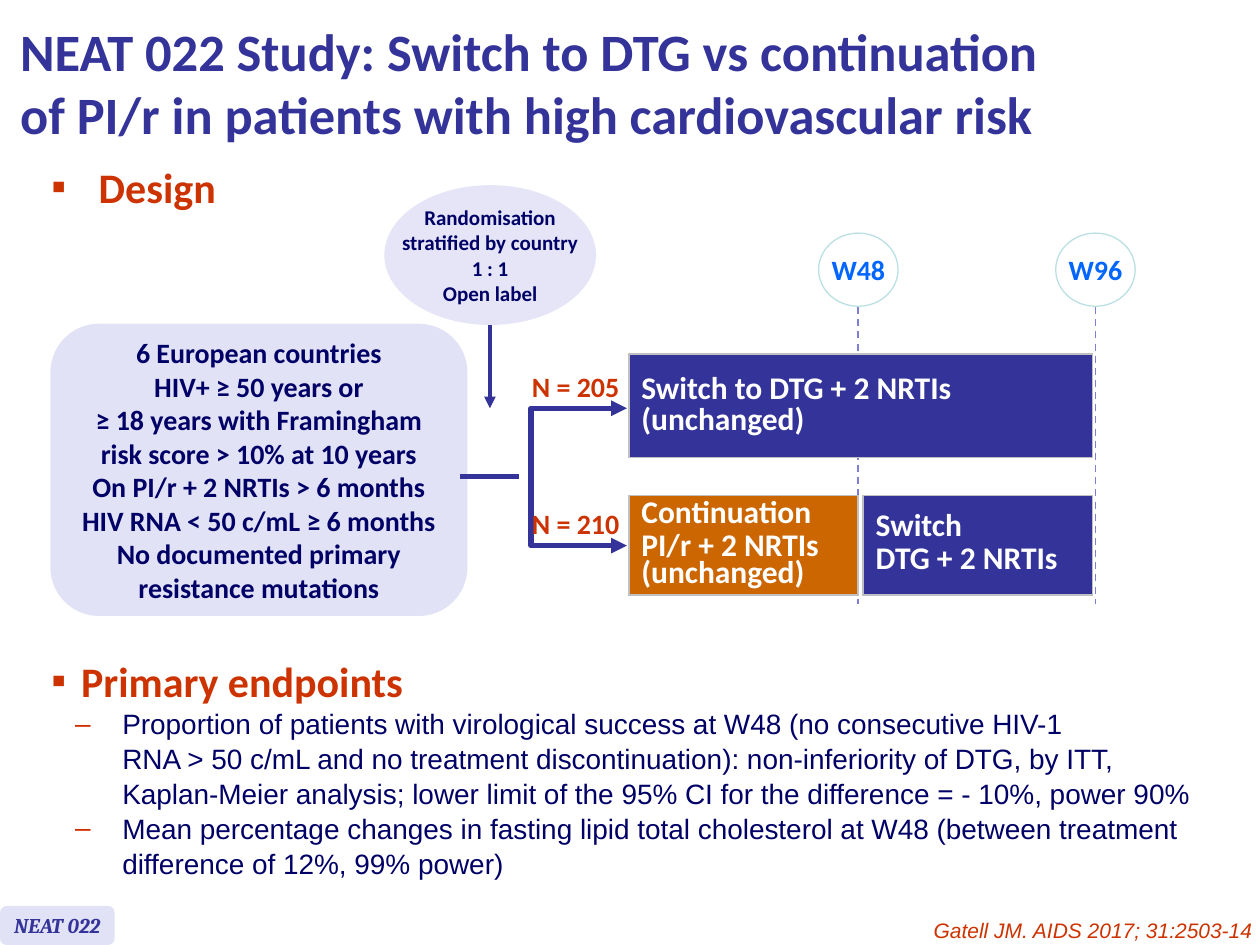
from lxml.etree import SubElement
from pptx import Presentation
from pptx.dml.color import RGBColor
from pptx.enum.dml import MSO_LINE
from pptx.enum.shapes import MSO_CONNECTOR, MSO_SHAPE
from pptx.enum.text import MSO_ANCHOR, MSO_AUTO_SIZE, PP_ALIGN
from pptx.oxml.ns import qn
from pptx.util import Pt

NAVY = RGBColor(0x00, 0x00, 0x66)
INDIGO = RGBColor(0x33, 0x33, 0x99)
RED = RGBColor(0xCC, 0x33, 0x00)
ORANGE = RGBColor(0xCC, 0x66, 0x00)
BLUE = RGBColor(0x00, 0x66, 0xFF)
DASH = RGBColor(0x7E, 0x7E, 0xD4)
LAVENDER = RGBColor(0xE2, 0xE2, 0xF6)
PALE = RGBColor(0xE5, 0xE5, 0xF7)
AQUA = RGBColor(0xBB, 0xE0, 0xE3)
SILVER = RGBColor(0xC0, 0xC0, 0xC0)
WHITE = RGBColor(0xFF, 0xFF, 0xFF)


def style(size, color, name="Calibri", bold=True, italic=False):
    """Return the font values and colour of a kind of text."""
    return {"size": Pt(size), "name": name, "bold": bold, "italic": italic}, color


TITLE = style(30, INDIGO)
HEADING = style(24, RED)
DETAIL = style(16, NAVY, "Arial", bold=False)
CRITERIA = style(16, NAVY)
RANDOM = style(12, NAVY)
WEEK = style(16, BLUE)
COUNT = style(16, RED)
ARM = style(18, WHITE)
TAG = style(12, INDIGO, "Cambria", italic=True)
CITATION = style(12, RED, "Arial", bold=False, italic=True)


def apply(target, values):
    """Set each attribute named in a dict of format values."""
    for key, value in values.items():
        setattr(target, key, value)


def write(para, text, look, **layout):
    """Write text into a paragraph with one look."""
    para.text = text
    apply(para, layout)
    values, color = look
    for span in para.runs:
        apply(span.font, values)
        span.font.color.rgb = color


def fill_frame(frame, texts, look, gap=0, **layout):
    """Write one paragraph for each text, with a gap between them."""
    for index, text in enumerate(texts):
        para = frame.paragraphs[0] if index == 0 else frame.add_paragraph()
        write(para, text, look, space_before=Pt(gap if index else 0), **layout)


def add_text(page, place, texts, look, wrap=True, **layout):
    """Add a text box."""
    frame = page.shapes.add_textbox(*map(Pt, place)).text_frame
    frame.word_wrap = wrap
    fill_frame(frame, texts, look, **layout)


def add_bullets(page, place, items):
    """Add a text box of bulleted paragraphs."""
    frame = page.shapes.add_textbox(*map(Pt, place)).text_frame
    frame.word_wrap = True
    for index, (mark, margin, hang, text, look, spacing) in enumerate(items):
        para = frame.paragraphs[0] if index == 0 else frame.add_paragraph()
        props = para._p.get_or_add_pPr()
        props.set("marL", str(Pt(margin)))
        props.set("indent", str(-Pt(hang)))
        tint = SubElement(props, qn("a:buClr"))
        SubElement(tint, qn("a:srgbClr"), val=str(RED))
        SubElement(props, qn("a:buFont"), typeface="Arial")
        SubElement(props, qn("a:buChar"), char=mark)
        write(para, text, look, line_spacing=spacing)


def add_panel(page, kind, place, fill, texts, look, outline=None):
    """Add a filled shape with centred text."""
    shape = page.shapes.add_shape(kind, *map(Pt, place))
    shape.shadow.inherit = False
    shape.fill.solid()
    shape.fill.fore_color.rgb = fill
    if outline is None:
        shape.line.fill.background()
    else:
        shape.line.color.rgb = outline
        shape.line.width = Pt(0.75)
    apply(shape.text_frame, {"word_wrap": False, "vertical_anchor": MSO_ANCHOR.MIDDLE})
    fill_frame(shape.text_frame, texts, look, alignment=PP_ALIGN.CENTER)


def add_arm(page, place, fill, texts, spacing):
    """Add a one-cell table for a treatment arm."""
    table = page.shapes.add_table(1, 1, *map(Pt, place)).table
    apply(table, {"first_row": False, "horz_banding": False})
    cell = table.cell(0, 0)
    props = cell._tc.get_or_add_tcPr()
    for side in ("lnL", "lnR", "lnT", "lnB"):
        border = SubElement(props, qn(f"a:{side}"), w=str(Pt(1)))
        paint = SubElement(border, qn("a:solidFill"))
        SubElement(paint, qn("a:srgbClr"), val=str(SILVER))
    cell.fill.solid()
    cell.fill.fore_color.rgb = fill
    cell.vertical_anchor = MSO_ANCHOR.MIDDLE
    fill_frame(cell.text_frame, texts, ARM, gap=3.6, line_spacing=spacing)


def add_heads(line, *ends):
    """Put triangle arrowheads on the named ends of a line."""
    for end in ends:
        SubElement(line._get_or_add_ln(), qn(f"a:{end}"), type="triangle")


def add_line(page, start, end, color, width, dash=None, heads=()):
    """Add a straight line between two points."""
    line = page.shapes.add_connector(MSO_CONNECTOR.STRAIGHT, *map(Pt, start + end))
    SubElement(line._element.spPr, qn("a:effectLst"))
    line.line.color.rgb = color
    apply(line.line, {"width": Pt(width), "dash_style": dash})
    add_heads(line.line, *heads)


def add_fork(page, left, right, top, bottom):
    """Add the bracket whose arrows lead to both arms."""
    builder = page.shapes.build_freeform(Pt(right), Pt(top))
    corners = [(left, top), (left, bottom), (right, bottom)]
    builder.add_line_segments([(Pt(x), Pt(y)) for x, y in corners], close=False)
    fork = builder.convert_to_shape()
    fork.shadow.inherit = False
    fork.fill.background()
    fork.line.color.rgb = INDIGO
    fork.line.width = Pt(3)
    add_heads(fork.line, "headEnd", "tailEnd")


def add_title(page, place, text):
    """Move and format the title placeholder."""
    title = page.shapes.title
    apply(title, dict(zip(("left", "top", "width", "height"), map(Pt, place))))
    apply(title.text_frame, {"word_wrap": True, "auto_size": MSO_AUTO_SIZE.NONE,
                             "vertical_anchor": MSO_ANCHOR.MIDDLE})
    write(title.text_frame.paragraphs[0], text, TITLE, alignment=PP_ALIGN.LEFT)


def main():
    """Build the study design slide."""
    deck = Presentation()
    apply(deck, {"slide_width": Pt(720), "slide_height": Pt(540)})
    page = deck.slides.add_slide(deck.slide_layouts[5])
    add_title(page, (4.3, 3.6, 710.6, 87),
              "NEAT 022 Study: Switch to DTG vs continuation\v"
              "of PI/r in patients with high cardiovascular risk")
    for week, center in (("W48", 490.5), ("W96", 626)):
        add_line(page, (center, 175.5), (center, 345), DASH, 1, MSO_LINE.DASH)
        add_panel(page, MSO_SHAPE.OVAL, (center - 22.7, 133.2, 45.4, 41.8),
                  WHITE, [week], WEEK, AQUA)

    add_bullets(page, (22.3, 88.6, 610.6, 45.4), [("▪", 27, 27, "Design", HEADING, 1)])
    add_bullets(page, (22.3, 370.8, 689, 160), [
        ("▪", 17, 17, "Primary endpoints", HEADING, 1),
        ("–", 40.5, 27,
         "Proportion of patients with virological success at W48 (no consecutive HIV-1\v"
         "RNA > 50 c/mL and no treatment discontinuation): non-inferiority of DTG, by ITT,\v"
         "Kaplan-Meier analysis; lower limit of the 95% CI for the difference = - 10%, "
         "power 90%", DETAIL, 1.04),
        ("–", 40.5, 27,
         "Mean percentage changes in fasting lipid total cholesterol at W48 "
         "(between treatment difference of 12%, 99% power)", DETAIL, 1.04)])

    add_arm(page, (359.3, 202.3, 265, 59), INDIGO,
            ["Switch to DTG + 2 NRTIs (unchanged)"], 0.8)
    add_arm(page, (359.3, 283, 131, 57), ORANGE,
            ["Continuation", "PI/r + 2 NRTIs (unchanged)"], 0.7)
    add_arm(page, (493.2, 283, 131, 57), INDIGO, ["Switch", "DTG + 2 NRTIs"], 0.7)

    add_line(page, (280, 185), (280, 233.3), INDIGO, 2.25, heads=["tailEnd"])
    add_panel(page, MSO_SHAPE.OVAL, (219.6, 105.8, 121, 79.9), PALE,
              ["Randomisation", "stratified by country", "1 : 1", "Open label"], RANDOM)
    add_panel(page, MSO_SHAPE.ROUNDED_RECTANGLE, (28.8, 185, 238.3, 167), LAVENDER,
              ["6 European countries", "HIV+ ≥ 50 years or",
               "≥ 18 years with Framingham", "risk score > 10% at 10 years",
               "On PI/r + 2 NRTIs > 6 months", "HIV RNA < 50 c/mL ≥ 6 months",
               "No documented primary", "resistance mutations"], CRITERIA)
    add_fork(page, 303.4, 358.3, 233.3, 311.8)
    add_line(page, (262.8, 272.2), (296.6, 272.2), INDIGO, 3)
    for count, top in (("N = 205", 207.4), ("N = 210", 285.8)):
        add_text(page, (296.6, top, 64.8, 26.6), [count], COUNT, wrap=False,
                 alignment=PP_ALIGN.CENTER)

    add_panel(page, MSO_SHAPE.ROUNDED_RECTANGLE, (0, 517.7, 65.5, 22.3), LAVENDER,
              ["NEAT 022"], TAG)
    add_text(page, (470.9, 520.6, 252, 21.6), ["Gatell JM. AIDS 2017; 31:2503-14"],
             CITATION, alignment=PP_ALIGN.RIGHT)
    deck.save("out.pptx")


if __name__ == "__main__":
    main()
